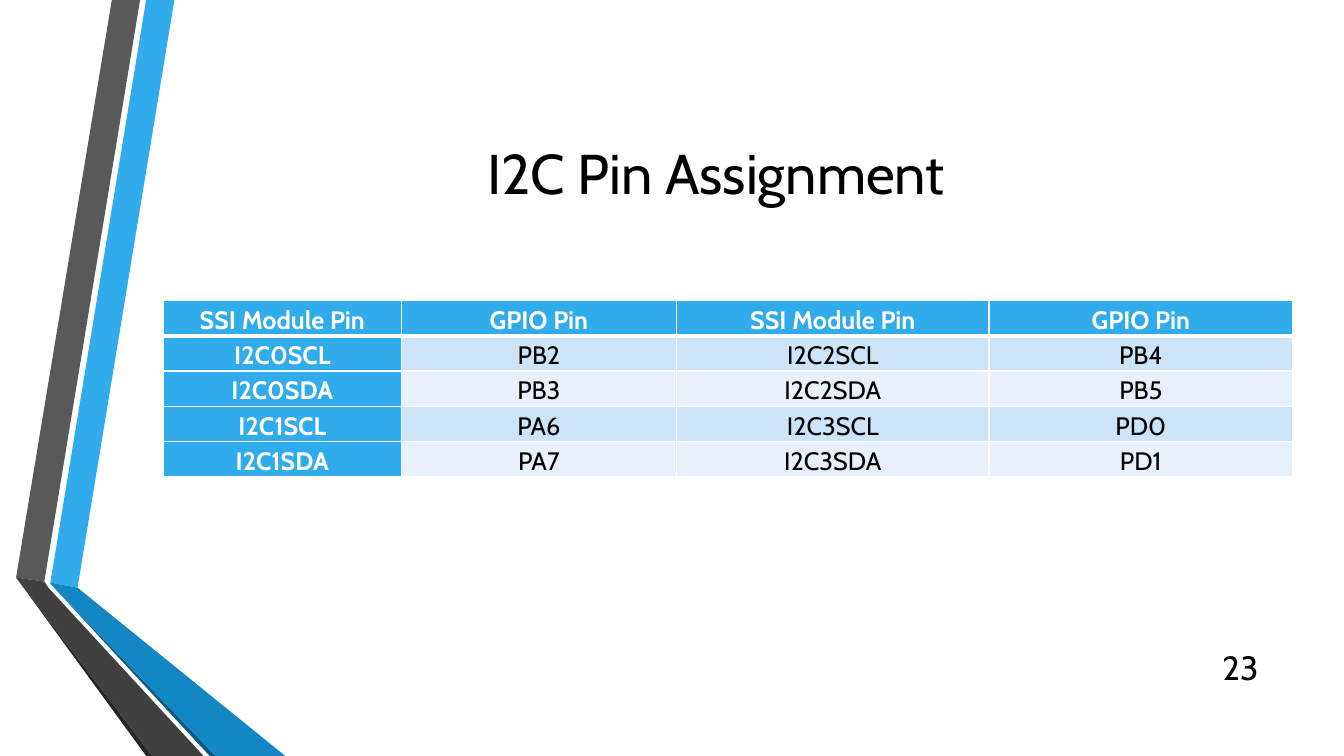
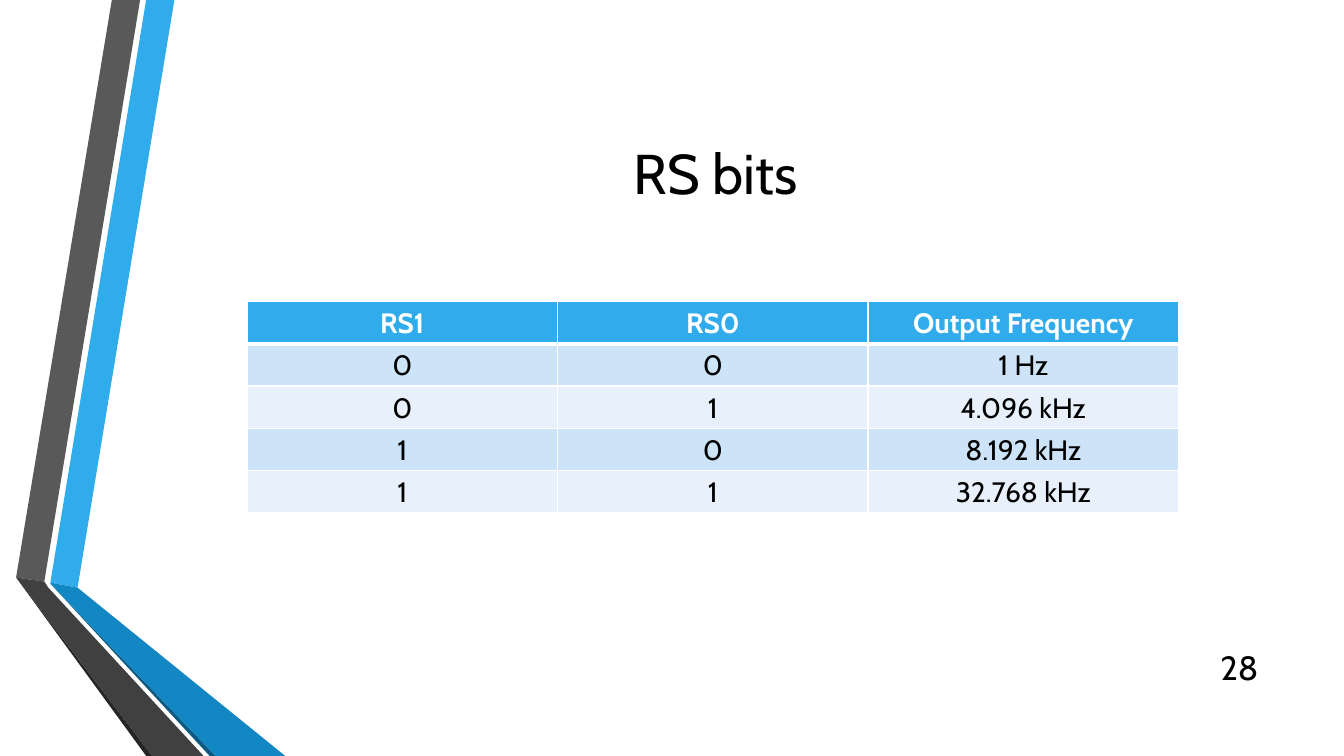
"""Builds two slides with pin and frequency tables beside a folded ribbon."""
import pptx
import pptx.dml.color
import pptx.enum.text
import pptx.oxml
import pptx.oxml.ns
import pptx.util

Inches = pptx.util.Inches
Pt = pptx.util.Pt
Align = pptx.enum.text.PP_ALIGN
Anchor = pptx.enum.text.MSO_ANCHOR

RIBBONS = [
    ("accent", [(0.5, 5.78), (0.77, 5.83), (1.73, 0), (1.45, 0)]),
    ("gray", [(1.39, 0), (1.11, 0), (0.16, 5.73), (0.44, 5.77)]),
    ("gray_edge", [(0.16, 5.73), (1.45, 7.5), (1.51, 7.5)]),
    ("accent_edge", [(0.5, 5.79), (2.08, 7.5), (2.14, 7.5)]),
    ("accent_fold", [(0.5, 5.78), (0.5, 5.79), (2.14, 7.5), (2.83, 7.5), (0.77, 5.83)]),
    ("gray_fold", [(2.02, 7.5), (0.48, 5.83), (0.44, 5.77), (0.16, 5.73), (1.51, 7.5)]),
]

PIN_ROWS = [
    ["SSI Module Pin", "GPIO Pin", "SSI Module Pin", "GPIO Pin"],
    ["I2C0SCL", "PB2", "I2C2SCL", "PB4"],
    ["I2C0SDA", "PB3", "I2C2SDA", "PB5"],
    ["I2C1SCL", "PA6", "I2C3SCL", "PD0"],
    ["I2C1SDA", "PA7", "I2C3SDA", "PD1"],
]

RATE_ROWS = [
    ["RS1", "RS0", "Output Frequency"],
    ["0", "0", "1 Hz"],
    ["0", "1", "4.096 kHz"],
    ["1", "0", "8.192 kHz"],
    ["1", "1", "32.768 kHz"],
]


class RibbonDeck:
    font = "Cabin"
    colors = {
        "text": "000000",
        "white": "FFFFFF",
        "accent": "30ACEC",
        "accent_fold": "1287C3",
        "accent_edge": "0C5A82",
        "gray": "595959",
        "gray_fold": "404040",
        "gray_edge": "262626",
        "band_dark": "CDE3F8",
        "band_light": "E8F1FB",
    }

    def __init__(self):
        self.deck = pptx.Presentation()
        self.deck.slide_width = Inches(13.33)
        self.deck.slide_height = Inches(7.5)
        self.layout = self.deck.slide_layouts[5]
        self.page = None

    def color(self, name):
        return pptx.dml.color.RGBColor.from_string(self.colors[name])

    def paint(self, fill, name):
        fill.solid()
        fill.fore_color.rgb = self.color(name)

    def set_text(self, frame, text, size, align, color="text", bold=False):
        frame.text = text
        para = frame.paragraphs[0]
        para.alignment = align
        para.font.name = self.font
        para.font.size = Pt(size)
        para.font.bold = bold
        para.font.color.rgb = self.color(color)
        return para

    def add_page(self, title, number):
        first = self.page is None
        self.page = self.deck.slides.add_slide(self.layout)
        if first:
            self.add_ribbons()
        self.add_title(title)
        self.add_number(number)

    def add_ribbons(self):
        for index, (color, points) in enumerate(RIBBONS):
            corners = [(Inches(x), Inches(y)) for x, y in points]
            builder = self.page.shapes.build_freeform(*corners[0])
            builder.add_line_segments(corners[1:], close=True)
            ribbon = builder.convert_to_shape()
            ribbon.shadow.inherit = False
            self.paint(ribbon.fill, color)
            ribbon.line.fill.background()
            ribbon.element.xpath(".//p:cNvPr")[0].set("id", str(100 + index))
            self.layout.shapes.element.append(ribbon.element)

    def add_title(self, text):
        title = self.page.shapes.title
        title.left, title.top = Inches(1.62), Inches(0.75)
        title.width, title.height = Inches(10.96), Inches(1.92)
        title.text_frame.vertical_anchor = Anchor.MIDDLE
        self.set_text(title.text_frame, text, 40, Align.CENTER)

    def add_number(self, number):
        box = self.page.shapes.add_textbox(Inches(11.98), Inches(6.42), Inches(0.6), Inches(0.4))
        box.text_frame.word_wrap = True
        box.text_frame.vertical_anchor = Anchor.MIDDLE
        self.set_text(box.text_frame, str(number), 24, Align.RIGHT)

    def add_table(self, rows, left, top, widths, row_height, size, head_column=False):
        table = self.page.shapes.add_table(
            len(rows), len(widths), Inches(left), Inches(top),
            Inches(sum(widths)), Inches(row_height * len(rows))).table
        table.first_col = head_column
        for column, width in zip(table.columns, widths):
            column.width = Inches(width)
        for r, texts in enumerate(rows):
            table.rows[r].height = Inches(row_height)
            for c, text in enumerate(texts):
                head = r == 0 or (head_column and c == 0)
                band = "band_dark" if r % 2 else "band_light"
                cell = table.cell(r, c)
                cell.margin_left = cell.margin_right = Inches(0.07)
                cell.margin_top = cell.margin_bottom = 0
                self.paint(cell.fill, "accent" if head else band)
                para = self.set_text(cell.text_frame, text, size, Align.CENTER,
                                     "white" if head else "text", head)
                para.line_spacing = 1.15
                self.add_borders(cell, 3 if r == 1 else 1, 3 if r == 0 else 1)

    def add_borders(self, cell, top, bottom):
        properties = cell._tc.get_or_add_tcPr()
        sides = [("lnL", 1), ("lnR", 1), ("lnT", top), ("lnB", bottom)]
        for index, (side, width) in enumerate(sides):
            properties.insert(index, pptx.oxml.parse_xml(
                f'<a:{side} {pptx.oxml.ns.nsdecls("a")} w="{Pt(width)}"><a:solidFill>'
                f'<a:srgbClr val="{self.colors["white"]}"/></a:solidFill></a:{side}>'))

    def save(self):
        self.deck.save("out.pptx")


def main():
    ribbon_deck = RibbonDeck()
    ribbon_deck.add_page("I2C Pin Assignment", 23)
    ribbon_deck.add_table(PIN_ROWS, 1.62, 2.98, [2.36, 2.73, 3.1, 3.01], 0.35, 18, head_column=True)
    ribbon_deck.add_page("RS bits", 28)
    ribbon_deck.add_table(RATE_ROWS, 2.45, 2.99, [3.08] * 3, 0.42, 20)
    ribbon_deck.save()


if __name__ == "__main__":
    main()
